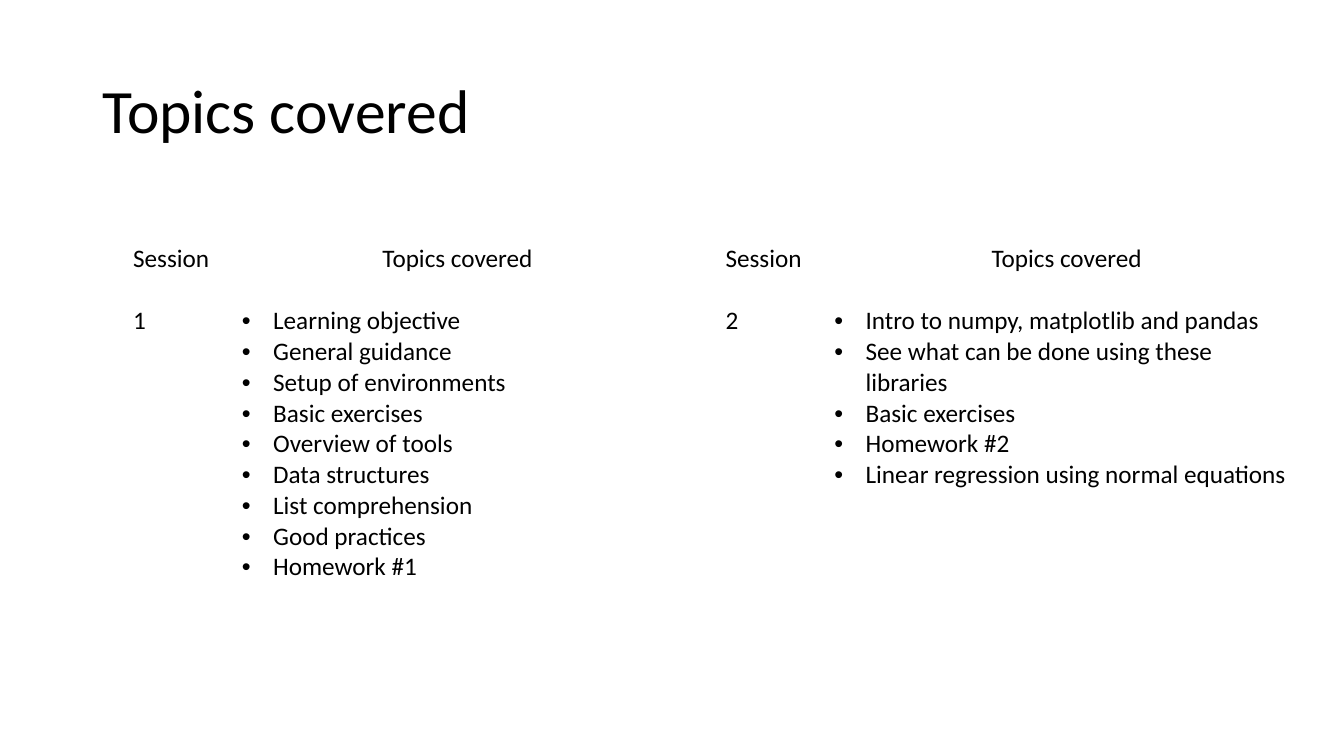
from dataclasses import dataclass

from lxml import etree
from pptx import Presentation
from pptx import util as u
from pptx.dml.color import RGBColor
from pptx.enum import text
from pptx.oxml import ns
from pptx.slide import Slide
from pptx.table import _Cell
from pptx.text.text import _Paragraph


@dataclass(frozen=True)
class Theme:
    font: str = "Calibri"
    ink: RGBColor = RGBColor(0, 0, 0)
    title_size: u.Length = u.Pt(44)
    body_size: u.Length = u.Pt(18)


@dataclass(frozen=True)
class Session:
    number: str
    left: u.Length
    topics_width: u.Length
    topics: tuple[str, ...]


THEME = Theme()
HEADING = "Topics covered"
TABLE_TOP = u.Cm(6)
NUMBER_WIDTH = u.Cm(2.74)
ROW_HEIGHTS = (u.Cm(1.58), u.Cm(1.04), u.Cm(1.04))
BULLET_INDENT = u.Cm(0.79)

SESSIONS = (
    Session("1", u.Cm(3.1), u.Cm(11.38), (
        "Learning objective",
        "General guidance",
        "Setup of environments",
        "Basic exercises",
        "Overview of tools",
        "Data structures",
        "List comprehension",
        "Good practices",
        "Homework #1",
    )),
    Session("2", u.Cm(18.03), u.Cm(12.22), (
        "Intro to numpy, matplotlib and pandas",
        "See what can be done using these libraries",
        "Basic exercises",
        "Homework #2",
        "Linear regression using normal equations",
    )),
)


def set_attributes(target: object, values: dict[str, object]) -> None:
    for name, value in values.items():
        setattr(target, name, value)


def format_font(paragraph: _Paragraph, size: u.Length) -> None:
    for run in paragraph.runs:
        set_attributes(run.font, {"name": THEME.font, "size": size, "bold": False})
        run.font.color.rgb = THEME.ink


def add_bullet(paragraph: _Paragraph) -> None:
    properties = paragraph._p.get_or_add_pPr()
    properties.set("marL", str(BULLET_INDENT))
    properties.set("indent", str(-BULLET_INDENT))
    etree.SubElement(properties, ns.qn("a:buFont")).set("typeface", "Arial")
    etree.SubElement(properties, ns.qn("a:buChar")).set("char", "•")


def write_cell(cell: _Cell, content: str, alignment: text.PP_ALIGN = text.PP_ALIGN.LEFT) -> None:
    cell.text = content
    for paragraph in cell.text_frame.paragraphs:
        paragraph.alignment = alignment
        format_font(paragraph, THEME.body_size)


def add_title(slide: Slide) -> None:
    title = slide.shapes.title
    set_attributes(title, {
        "left": u.Cm(2.33), "top": u.Cm(1.01), "width": u.Cm(29.21), "height": u.Cm(3.68),
    })
    frame = title.text_frame
    frame.text = HEADING
    set_attributes(frame, {"vertical_anchor": text.MSO_ANCHOR.MIDDLE, "word_wrap": True})
    paragraph = frame.paragraphs[0]
    set_attributes(paragraph, {"alignment": text.PP_ALIGN.LEFT, "line_spacing": 0.9})
    format_font(paragraph, THEME.title_size)


def add_session(slide: Slide, session: Session) -> None:
    widths = (NUMBER_WIDTH, session.topics_width)
    table = slide.shapes.add_table(
        len(ROW_HEIGHTS), len(widths), session.left, TABLE_TOP, sum(widths), sum(ROW_HEIGHTS)
    ).table
    set_attributes(table, {"first_row": False, "horz_banding": False})
    for column, width in zip(table.columns, widths):
        column.width = width
    for row, height in zip(table.rows, ROW_HEIGHTS):
        row.height = height
    for cell in table.iter_cells():
        cell.fill.background()

    write_cell(table.cell(0, 0), "Session")
    write_cell(table.cell(0, 1), HEADING, text.PP_ALIGN.CENTER)
    write_cell(table.cell(1, 0), session.number)
    topics = table.cell(1, 1)
    topics.merge(table.cell(2, 1))
    write_cell(topics, "\n".join(session.topics))
    for paragraph in topics.text_frame.paragraphs:
        add_bullet(paragraph)


def main() -> None:
    presentation = Presentation()
    set_attributes(presentation, {"slide_width": u.Cm(33.87), "slide_height": u.Cm(19.05)})
    slide = presentation.slides.add_slide(presentation.slide_layouts.get_by_name("Title Only"))
    add_title(slide)
    for session in SESSIONS:
        add_session(slide, session)
    presentation.save("out.pptx")


if __name__ == "__main__":
    main()
